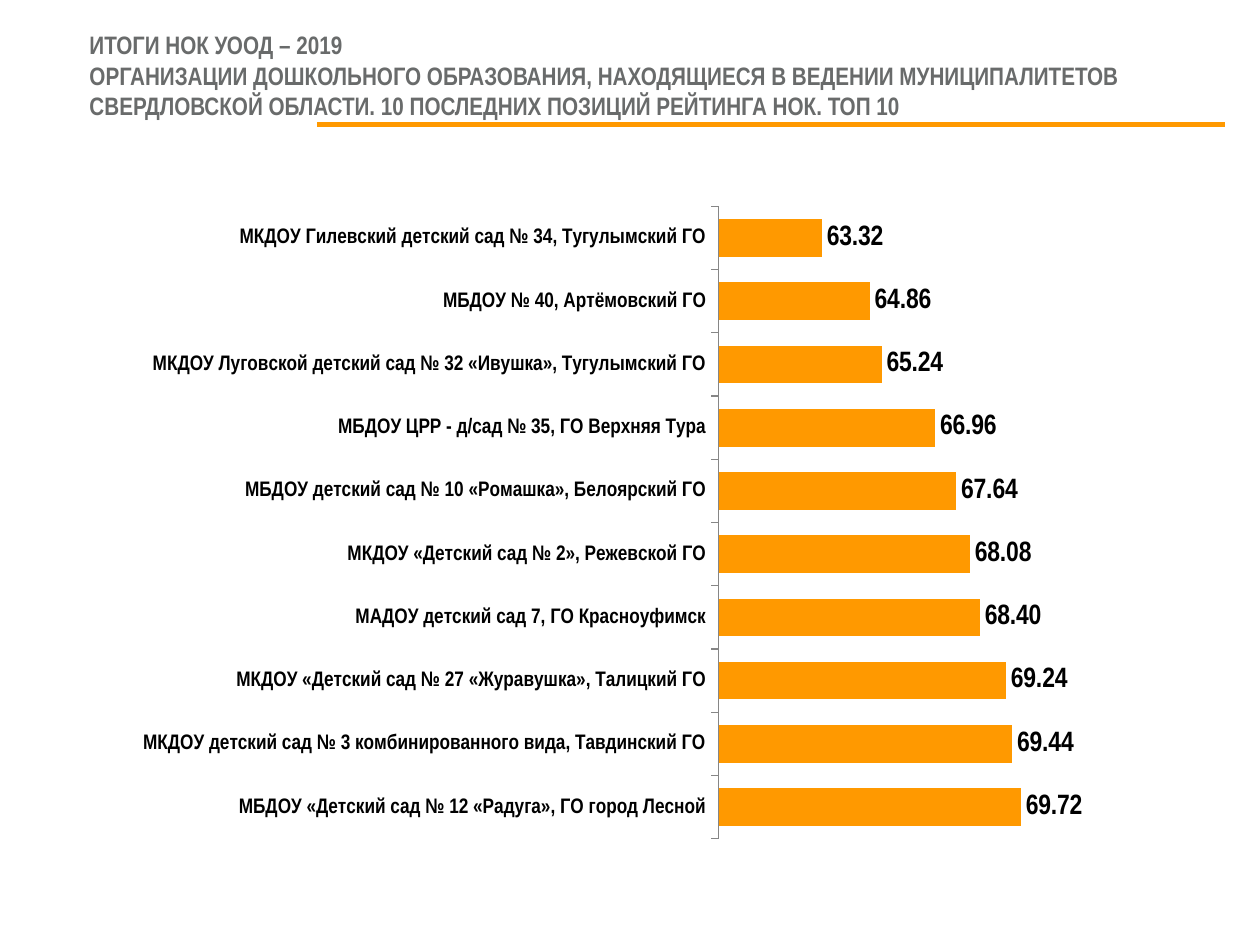
from lxml import etree
from pptx import Presentation
from pptx.chart.data import CategoryChartData
from pptx.dml.color import RGBColor
from pptx.enum.chart import XL_CHART_TYPE, XL_LABEL_POSITION, XL_TICK_MARK
from pptx.enum.shapes import MSO_CONNECTOR
from pptx.enum.text import MSO_ANCHOR, MSO_AUTO_SIZE, PP_ALIGN
from pptx.oxml import parse_xml
from pptx.oxml.ns import nsdecls, qn
from pptx.util import Inches, Pt

BAR = XL_CHART_TYPE.BAR_CLUSTERED
OUTSIDE_END = XL_LABEL_POSITION.OUTSIDE_END
TICK_OUT = XL_TICK_MARK.OUTSIDE
STRAIGHT = MSO_CONNECTOR.STRAIGHT
MIDDLE = MSO_ANCHOR.MIDDLE
NO_FIT = MSO_AUTO_SIZE.NONE
LEFT = PP_ALIGN.LEFT

FONT = "Arial Narrow"
COLORS = {"title": "696B6B", "accent": "FF9900", "text": "000000", "axis": "868686"}
TITLE_ONLY = 5
PLOT_AREA = {"x": 0.596, "y": 0.045, "w": 0.395, "h": 0.911}

TITLE_LINES = (
    "ИТОГИ НОК УООД – 2019",
    "ОРГАНИЗАЦИИ ДОШКОЛЬНОГО ОБРАЗОВАНИЯ, НАХОДЯЩИЕСЯ В ВЕДЕНИИ МУНИЦИПАЛИТЕТОВ "
    "СВЕРДЛОВСКОЙ ОБЛАСТИ. 10 ПОСЛЕДНИХ ПОЗИЦИЙ РЕЙТИНГА НОК. ТОП 10",
)
RATINGS = {
    "МБДОУ «Детский сад № 12 «Радуга», ГО город Лесной": 69.72,
    "МКДОУ детский сад № 3 комбинированного вида, Тавдинский ГО": 69.44,
    "МКДОУ «Детский сад № 27 «Журавушка», Талицкий ГО": 69.24,
    "МАДОУ детский сад 7, ГО Красноуфимск": 68.40,
    "МКДОУ «Детский сад № 2», Режевской ГО": 68.08,
    "МБДОУ детский сад № 10 «Ромашка», Белоярский ГО": 67.64,
    "МБДОУ ЦРР - д/сад № 35, ГО Верхняя Тура": 66.96,
    "МКДОУ Луговской детский сад № 32 «Ивушка», Тугулымский ГО": 65.24,
    "МБДОУ № 40, Артёмовский ГО": 64.86,
    "МКДОУ Гилевский детский сад № 34, Тугулымский ГО": 63.32,
}


def color(name):
    return RGBColor.from_string(COLORS[name])


def style_font(font, size, color_name, bold=True):
    font.name = FONT
    font.size = Pt(size)
    font.bold = bold
    font.color.rgb = color(color_name)


def set_title(page):
    box = page.shapes.title
    box.left, box.top = Inches(0.61), Inches(0.43)
    box.width, box.height = Inches(9), Inches(0.57)
    frame = box.text_frame
    frame.auto_size = NO_FIT
    frame.word_wrap = True
    frame.vertical_anchor = MIDDLE
    frame.margin_bottom = Inches(0.29)
    para = frame.paragraphs[0]
    para.alignment = LEFT
    for index, line in enumerate(TITLE_LINES):
        if index:
            para.add_line_break()
        span = para.add_run()
        span.text = line
        style_font(span.font, 14.4, "title")


def add_rule(page, left, right, top):
    rule = page.shapes.add_connector(
        STRAIGHT, Inches(left), Inches(top), Inches(right), Inches(top))
    rule.line.color.rgb = color("accent")
    rule.line.width = Pt(3)
    etree.SubElement(rule._element.spPr, qn("a:effectLst"))


def place_plot(chart):
    sizes = "".join(f'<c:{side} val="{share}"/>' for side, share in PLOT_AREA.items())
    layout = parse_xml(
        f'<c:layout {nsdecls("c")}><c:manualLayout><c:layoutTarget val="inner"/>'
        f'<c:xMode val="edge"/><c:yMode val="edge"/>{sizes}</c:manualLayout></c:layout>')
    plot_area = chart._chartSpace.chart.plotArea
    for old in plot_area.findall(qn("c:layout")):
        plot_area.remove(old)
    plot_area.insert(0, layout)


def format_axes(chart):
    names = chart.category_axis
    names.major_tick_mark = TICK_OUT
    names.has_major_gridlines = False
    names.format.line.color.rgb = color("axis")
    names.format.line.width = Pt(0.75)
    style_font(names.tick_labels.font, 12, "text")
    scale = chart.value_axis
    scale.minimum_scale, scale.maximum_scale, scale.major_unit = 60, 75, 10
    scale.has_major_gridlines = False
    scale.visible = False


def format_bars(plot):
    plot.gap_width = 68
    plot.vary_by_categories = False
    bars = plot.series[0]
    bars.format.fill.solid()
    bars.format.fill.fore_color.rgb = color("accent")
    labels = bars.data_labels
    labels.show_value = True
    labels.number_format = "#,##0.00"
    labels.number_format_is_linked = False
    labels.position = OUTSIDE_END
    style_font(labels.font, 16, "text")


def add_rating_chart(page):
    data = CategoryChartData()
    data.categories = list(RATINGS)
    data.add_series("Series 1", list(RATINGS.values()))
    chart = page.shapes.add_chart(
        BAR, Inches(0.12), Inches(1.39), Inches(9.37), Inches(5.51), data).chart
    chart.has_legend = False
    chart.has_title = False
    style_font(chart.font, 14, "text", bold=False)
    place_plot(chart)
    format_axes(chart)
    format_bars(chart.plots[0])


def main():
    deck = Presentation()
    deck.slide_width, deck.slide_height = Inches(10), Inches(7.5)
    page = deck.slides.add_slide(deck.slide_layouts[TITLE_ONLY])
    set_title(page)
    add_rule(page, 2.52, 9.72, 0.99)
    add_rating_chart(page)
    deck.save("out.pptx")


if __name__ == "__main__":
    main()
